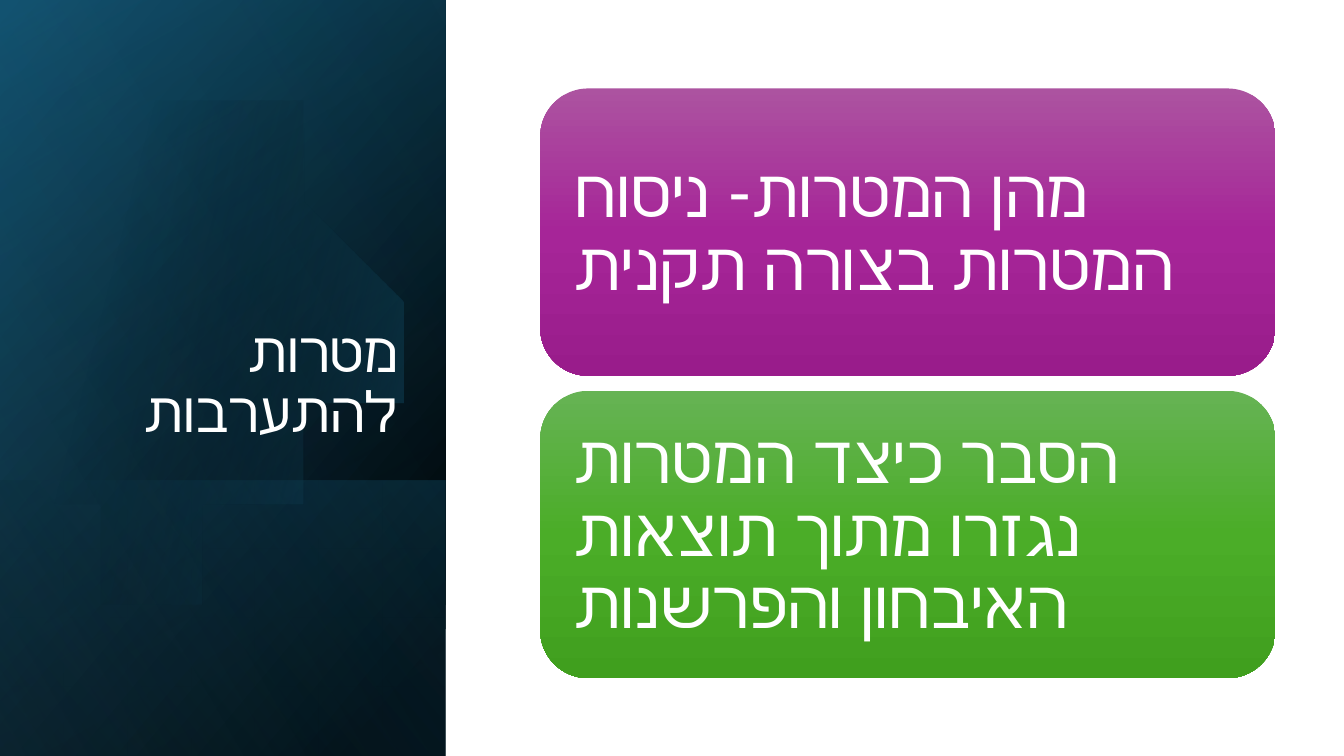
from lxml import etree
from pptx import Presentation, util as u
from pptx.dml.color import RGBColor
from pptx.enum import shapes, text
from pptx.oxml import ns

BLACK = RGBColor(0x00, 0x00, 0x00)
WHITE = RGBColor(0xFF, 0xFF, 0xFF)
DEEP_TEAL = RGBColor(0x10, 0x48, 0x62)
TEAL = RGBColor(0x15, 0x60, 0x82)
SKY = RGBColor(0x46, 0xB1, 0xE1)
PURPLES = [RGBColor(0xAC, 0x53, 0xA0), RGBColor(0xA6, 0x25, 0x98), RGBColor(0x99, 0x1C, 0x8B)]
GREENS = [RGBColor(0x66, 0xB3, 0x54), RGBColor(0x4B, 0xAD, 0x28), RGBColor(0x40, 0x9F, 0x1E)]
FONT = "Lato"


def paint_gradient(shape, angle, stops):
    shape.shadow.inherit = False
    shape.line.fill.background()
    shape.fill.background()
    gradient = etree.Element(ns.qn("a:gradFill"), rotWithShape="1")
    stop_list = etree.SubElement(gradient, ns.qn("a:gsLst"))
    for position, color, opacity in stops:
        stop = etree.SubElement(stop_list, ns.qn("a:gs"), pos=str(position * 1000))
        fill = etree.SubElement(stop, ns.qn("a:srgbClr"), val=str(color))
        etree.SubElement(fill, ns.qn("a:alpha"), val=str(opacity * 1000))
    etree.SubElement(gradient, ns.qn("a:lin"), ang=str(angle * 60000), scaled="0")
    properties = shape._element.spPr
    properties.replace(properties.find(ns.qn("a:noFill")), gradient)


def write_hebrew(shape, wording, size, alignment):
    paragraph = shape.text_frame.paragraphs[0]
    paragraph.alignment = alignment
    paragraph.line_spacing = 0.9
    paragraph._p.get_or_add_pPr().set("rtl", "1")
    run = paragraph.add_run()
    run.text = wording
    run.font.size = u.Pt(size)
    run.font.name = FONT
    run.font.color.rgb = WHITE
    etree.SubElement(run._r.get_or_add_rPr(), ns.qn("a:cs"), typeface=FONT)


presentation = Presentation()
presentation.slide_width = u.Inches(13.333)
presentation.slide_height = u.Inches(7.5)
width, height = presentation.slide_width, presentation.slide_height
slide = presentation.slides.add_slide(presentation.slide_layouts[5])

panel_width = int(width * 0.3315)
bands = [
    (1, 50, [(8, BLACK, 100), (100, DEEP_TEAL, 100)]),
    (1, 30, [(0, BLACK, 0), (99, TEAL, 46)]),
    (0.365, 130, [(2, TEAL, 29), (100, BLACK, 30)]),
    (1, 120, [(0, BLACK, 0), (99, SKY, 11)]),
]
circle_start = (1.49, 1.1)
circle_curves = [
    [(2.46, 1.12), (3.35, 1.77), (3.63, 2.75)],
    [(3.98, 3.97), (3.28, 5.23), (2.07, 5.58)],
    [(1.31, 5.8), (0.53, 5.61), (-0.03, 5.14)],
    [(-0.15, 5.03), (-0.15, 5.03), (-0.15, 5.03)],
    [(-0.15, 1.75), (-0.15, 1.75), (-0.15, 1.75)],
    [(0, 1.61), (0, 1.61), (0, 1.61)],
    [(0.23, 1.42), (0.5, 1.28), (0.8, 1.19)],
    [(1.03, 1.13), (1.26, 1.1), (1.49, 1.1)],
]
steps = 16

for index, (share, angle, stops) in enumerate(bands):
    if index == 3:
        outline = [circle_start]
        for first, second, end in circle_curves:
            start = outline[-1]
            for step in range(1, steps + 1):
                t = step / steps
                weights = ((1 - t) ** 3, 3 * t * (1 - t) ** 2, 3 * t * t * (1 - t), t ** 3)
                corners = (start, first, second, end)
                outline.append(tuple(sum(w * c[axis] for w, c in zip(weights, corners)) for axis in (0, 1)))
        builder = slide.shapes.build_freeform(*outline[0], scale=u.Inches(1))
        builder.add_line_segments(outline[1:], close=True)
        circle = builder.convert_to_shape()
        paint_gradient(circle, 14, [(29, BLACK, 0), (100, TEAL, 43)])
    length = int(height * share)
    band = slide.shapes.add_shape(
        shapes.MSO_SHAPE.RECTANGLE,
        (panel_width - length) // 2, height - (length + panel_width) // 2, length, panel_width)
    band.rotation = 90
    band._element.spPr.xfrm.set("flipH", "1")
    paint_gradient(band, angle, stops)

title = slide.shapes.title
title.left, title.top = int(width * 0.048), int(height * 0.245)
title.width, title.height = int(width * 0.256), int(height * 0.35)
title.text_frame.word_wrap = True
title.text_frame.auto_size = text.MSO_AUTO_SIZE.NONE
title.text_frame.vertical_anchor = text.MSO_ANCHOR.BOTTOM
write_hebrew(title, "מטרות להתערבות", 40, text.PP_ALIGN.RIGHT)
slide.shapes._spTree.append(title._element)

card_left, card_top = int(width * 0.402), int(height * 0.117)
card_width, card_height = int(width * 0.547), int(height * 0.38)
card_pitch = int(height * 0.4)
cards = [
    ("מהן המטרות- ניסוח המטרות בצורה תקנית", PURPLES),
    ("הסבר כיצד המטרות נגזרו מתוך תוצאות האיבחון והפרשנות", GREENS),
]
for row, (wording, colors) in enumerate(cards):
    card = slide.shapes.add_shape(
        shapes.MSO_SHAPE.ROUNDED_RECTANGLE,
        card_left, card_top + row * card_pitch, card_width, card_height)
    paint_gradient(card, 90, [(position, color, 100) for position, color in zip((0, 50, 100), colors)])
    frame = card.text_frame
    frame.word_wrap = True
    frame.vertical_anchor = text.MSO_ANCHOR.MIDDLE
    frame.margin_left = frame.margin_right = frame.margin_top = frame.margin_bottom = u.Inches(0.2)
    write_hebrew(card, wording, 48, text.PP_ALIGN.LEFT)

presentation.save("out.pptx")
